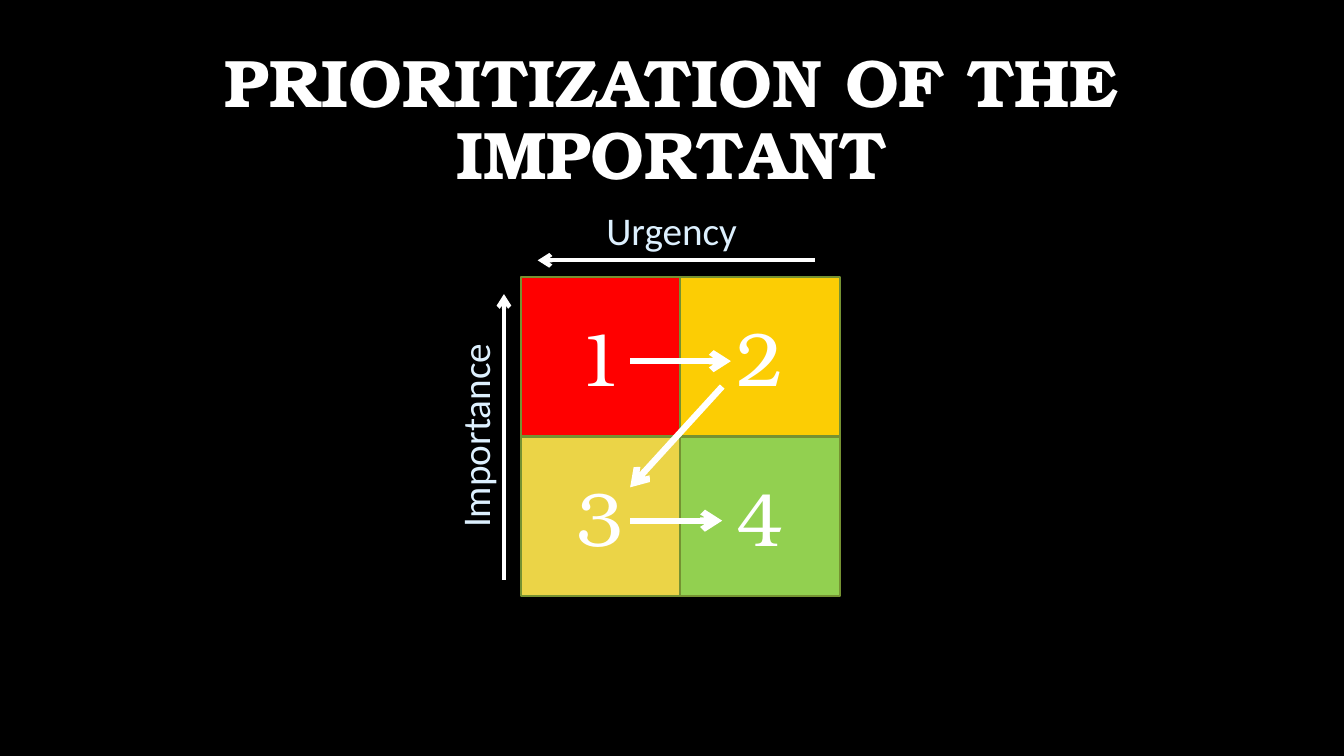
from typing import NamedTuple

from pptx import Presentation
from pptx.dml.color import RGBColor
from pptx.enum.shapes import MSO_CONNECTOR as Connector, MSO_SHAPE as Shape
from pptx.enum.text import MSO_ANCHOR as Anchor, PP_ALIGN as Align
from pptx.oxml.ns import qn
from pptx.slide import Slide
from pptx.text.text import TextFrame
from pptx.util import Cm, Pt
from lxml.etree import SubElement

SERIF, SANS = "TeX Gyre Bonum", "Calibri"
WHITE, PALE_BLUE, OLIVE = "FFFFFF", "DDF0FE", "759232"
MATRIX_LEFT, MATRIX_TOP, CELL = 13.12, 6.98, 4.02  # cm


class Quadrant(NamedTuple):
    number: str
    column: int
    row: int
    color: str


class Label(NamedTuple):
    text: str
    left: float
    top: float
    width: float
    height: float
    size: float
    font: str
    color: str
    rotation: float = 0
    title: bool = False


class Arrow(NamedTuple):
    x1: float
    y1: float
    x2: float
    y2: float
    weight: float


QUADRANTS = [
    Quadrant("1", 0, 0, "FF0000"),
    Quadrant("4", 1, 1, "92D050"),
    Quadrant("2", 1, 0, "FCCD04"),
    Quadrant("3", 0, 1, "EBD447"),
]
LABELS = [
    Label("PRIORITIZATION OF THE IMPORTANT", 2.54, 1.27, 28.76, 3.6, 48, SERIF, WHITE, title=True),
    Label("Importance", 9, 9.86, 5.93, 1.45, 28, SANS, PALE_BLUE, rotation=270),
    Label("Urgency", 15.03, 5.08, 5.93, 1.45, 28, SANS, PALE_BLUE),
]
ARROWS = [
    Arrow(12.7, 14.61, 12.7, 7.41, 3),
    Arrow(20.53, 6.56, 13.55, 6.56, 3),
    Arrow(15.88, 9.1, 18.42, 9.1, 4.5),
    Arrow(15.88, 13.12, 18.2, 13.12, 4.5),
    Arrow(18.2, 9.74, 15.88, 12.28, 4.5),
]


def rgb(color: str) -> RGBColor:
    return RGBColor.from_string(color)


def write(frame: TextFrame, text: str, size: float, font: str, color: str,
          align: Align, bold: bool = False) -> None:
    frame.word_wrap = True
    paragraph = frame.paragraphs[0]
    paragraph.alignment = align
    run = paragraph.add_run()
    run.text = text
    run.font.size = Pt(size)
    run.font.name = font
    run.font.bold = bold
    run.font.color.rgb = rgb(color)


def draw_quadrant(slide: Slide, quadrant: Quadrant) -> None:
    cell = slide.shapes.add_shape(
        Shape.RECTANGLE,
        Cm(MATRIX_LEFT + quadrant.column * CELL),
        Cm(MATRIX_TOP + quadrant.row * CELL),
        Cm(CELL), Cm(CELL))
    cell.shadow.inherit = False
    cell.fill.solid()
    cell.fill.fore_color.rgb = rgb(quadrant.color)
    cell.line.color.rgb = rgb(OLIVE)
    cell.line.width = Pt(1.5)
    cell.text_frame.vertical_anchor = Anchor.MIDDLE
    write(cell.text_frame, quadrant.number, 54, SERIF, WHITE, Align.CENTER)


def draw_label(slide: Slide, label: Label) -> None:
    box = slide.shapes.add_textbox(
        Cm(label.left), Cm(label.top), Cm(label.width), Cm(label.height))
    box.rotation = label.rotation
    frame = box.text_frame
    align = Align.CENTER if label.title else Align.LEFT
    write(frame, label.text, label.size, label.font, label.color, align, label.title)
    if label.title:
        frame.vertical_anchor = Anchor.MIDDLE
        frame.paragraphs[0].line_spacing = 0.9


def draw_arrow(slide: Slide, arrow: Arrow) -> None:
    connector = slide.shapes.add_connector(
        Connector.STRAIGHT, Cm(arrow.x1), Cm(arrow.y1), Cm(arrow.x2), Cm(arrow.y2))
    connector.line.color.rgb = rgb(WHITE)
    connector.line.width = Pt(arrow.weight)
    SubElement(connector.line._get_or_add_ln(), qn("a:tailEnd"), type="arrow")
    SubElement(connector._element.spPr, qn("a:effectLst"))


def main() -> None:
    deck = Presentation()
    deck.slide_width, deck.slide_height = Cm(33.87), Cm(19.05)
    slide = deck.slides.add_slide(deck.slide_layouts[6])
    slide.background.fill.solid()
    slide.background.fill.fore_color.rgb = rgb("000000")
    for quadrant in QUADRANTS:
        draw_quadrant(slide, quadrant)
    for label in LABELS:
        draw_label(slide, label)
    for arrow in ARROWS:
        draw_arrow(slide, arrow)
    deck.save("out.pptx")


if __name__ == "__main__":
    main()
